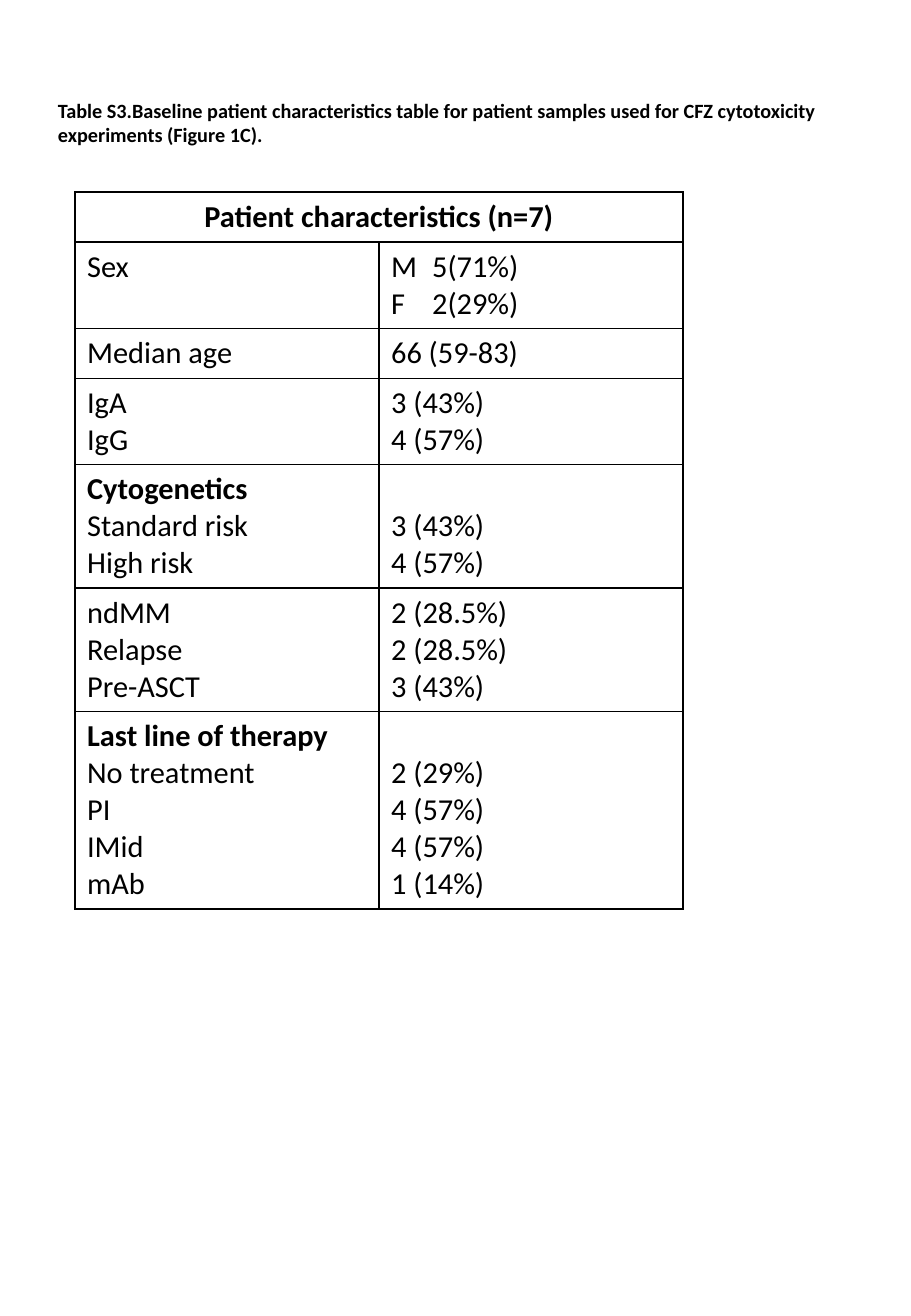
import pptx
import pptx.dml.color
import pptx.enum.text
import pptx.oxml
import pptx.oxml.ns
import pptx.util

PX = 914400 / 121.5
FONT = "Calibri"
COLORS = {"ink": "000000", "paper": "FFFFFF"}
ALIGN = pptx.enum.text.PP_ALIGN
ANCHOR = pptx.enum.text.MSO_ANCHOR

CAPTION = ("Table S3.Baseline patient characteristics table for patient samples "
           "used for CFZ cytotoxicity experiments (Figure 1C).")
TITLE = "Patient characteristics (n=7)"
# Heading of the group (or None), labels, values
GROUPS = [
    (None, ["Sex"], ["M\t5(71%)", "F\t2(29%)"]),
    (None, ["Median age"], ["66 (59-83)"]),
    (None, ["IgA", "IgG"], ["3 (43%)", "4 (57%)"]),
    ("Cytogenetics", ["Standard risk", "High risk"], ["3 (43%)", "4 (57%)"]),
    (None, ["ndMM", "Relapse", "Pre-ASCT"],
     ["2 (28.5%)", "2 (28.5%)", "3 (43%)"]),
    ("Last line of therapy", ["No treatment", "PI", "IMid", "mAb"],
     ["2 (29%)", "4 (57%)", "4 (57%)", "1 (14%)"]),
]


def px(n):
    return pptx.util.Emu(round(n * PX))


def rgb(name):
    return pptx.dml.color.RGBColor.from_string(COLORS[name])


def write(p, text, size=18, bold=False, align=ALIGN.LEFT):
    p.alignment = align
    r = p.add_run()
    r.text = text
    r.font.name = FONT
    r.font.size = pptx.util.Pt(size)
    r.font.bold = bold
    r.font.color.rgb = rgb("ink")


def write_lines(cell, lines, heading=None):
    """Write one paragraph per line, the heading first and bold."""
    tf = cell.text_frame
    texts = [heading] * bool(heading) + lines
    for i, text in enumerate(texts):
        p = tf.add_paragraph() if i else tf.paragraphs[0]
        write(p, text, bold=text == heading)
        if "\t" in text:
            add_tab_stop(p, 41)


def add_tab_stop(p, pos):
    ns = pptx.oxml.ns.nsdecls("a")
    p._p.get_or_add_pPr().append(pptx.oxml.parse_xml(
        f'<a:tabLst {ns}><a:tab pos="{px(pos)}" algn="l"/></a:tabLst>'))


def style_cell(cell):
    """Give a cell a plain fill and a 1 pt border on every side."""
    cell.fill.solid()
    cell.fill.fore_color.rgb = rgb("paper")
    ns = pptx.oxml.ns.nsdecls("a")
    for i, side in enumerate("LRTB"):
        cell._tc.get_or_add_tcPr().insert(i, pptx.oxml.parse_xml(
            f'<a:ln{side} {ns} w="12700"><a:solidFill>'
            f'<a:srgbClr val="{COLORS["ink"]}"/></a:solidFill></a:ln{side}>'))


def add_caption(s, x, y, w, h):
    tf = s.shapes.add_textbox(px(x), px(y), px(w), px(h)).text_frame
    tf.word_wrap = True
    write(tf.paragraphs[0], CAPTION, size=12, bold=True)


def add_characteristics(s, x, y, w, row_h):
    rows = len(GROUPS) + 1
    table = s.shapes.add_table(
        rows, 2, px(x), px(y), px(w), px(row_h * rows)).table
    table.first_row = table.horz_banding = False
    for row in table.rows:
        row.height = px(row_h)
    for cell in table.iter_cells():
        style_cell(cell)
    table.cell(0, 0).merge(table.cell(0, 1))
    write(table.cell(0, 0).text_frame.paragraphs[0], TITLE,
          bold=True, align=ALIGN.CENTER)
    for i, (heading, labels, values) in enumerate(GROUPS, 1):
        write_lines(table.cell(i, 0), labels, heading)
        write_lines(table.cell(i, 1), values)
        if heading:
            table.cell(i, 1).vertical_anchor = ANCHOR.BOTTOM


def main():
    prs = pptx.Presentation()
    prs.slide_width, prs.slide_height = px(911), px(1316)
    s = prs.slides.add_slide(prs.slide_layouts[6])
    add_characteristics(s, 75, 192, 608, 50)
    add_caption(s, 46, 92, 850, 61)
    prs.save("out.pptx")


if __name__ == "__main__":
    main()
